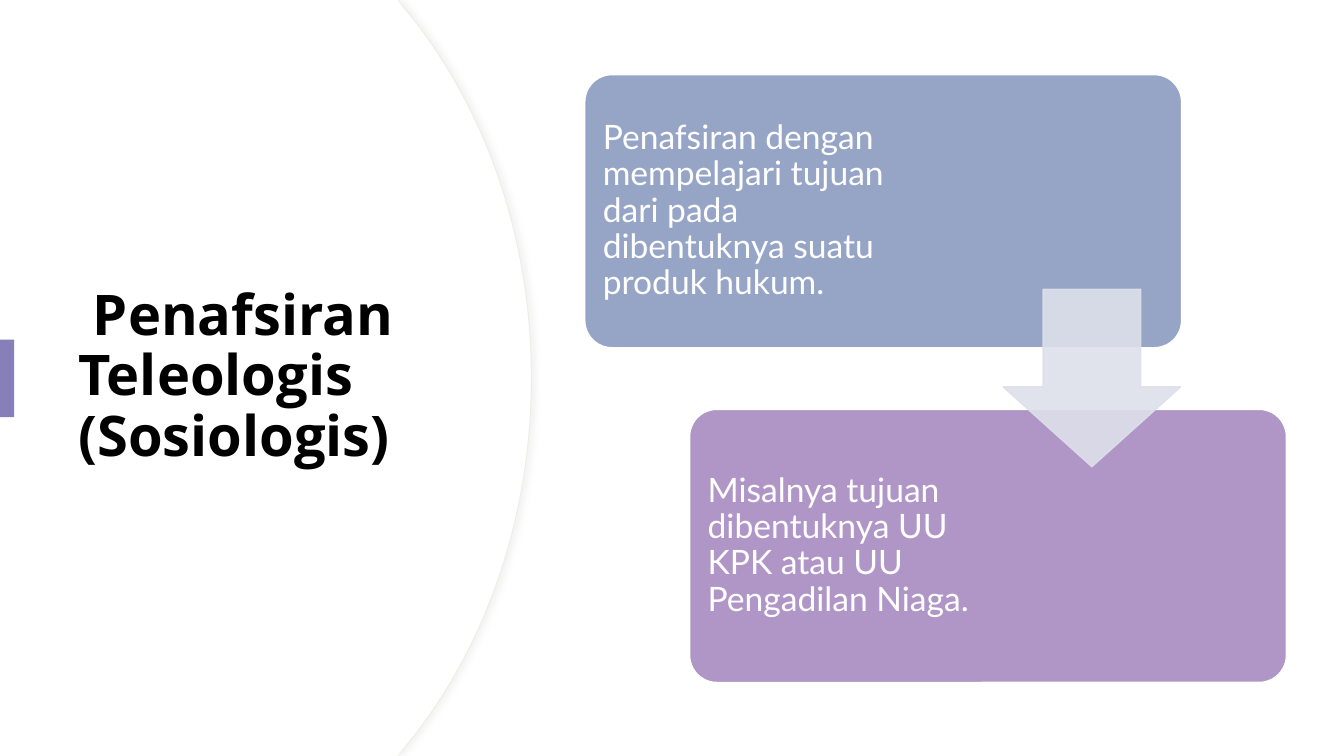
from dataclasses import dataclass
from lxml import etree
from pptx import Presentation
from pptx.dml.color import RGBColor
from pptx.enum.shapes import MSO_SHAPE as Preset
from pptx.enum.text import MSO_ANCHOR as Anchor
from pptx.oxml.ns import qn
from pptx.util import Inches, Pt

TITLE = (" ", "Penafsiran Teleologis (Sosiologis)")  # plain lead space, bold words
# wording, fill, text width in columns
CARDS = [
    ("Penafsiran dengan mempelajari tujuan dari pada dibentuknya suatu produk hukum.", "96A4C6", 23.33),
    ("Misalnya tujuan dibentuknya UU KPK atau UU Pengadilan Niaga.", "B096C6", 22.13),
]


@dataclass(frozen=True)
class Theme:
    white: str = "FFFFFF"
    black: str = "000000"
    edge: str = "F0EDE4"
    shade: str = "D9D9D9"
    accent: str = "867FBA"
    arrow: str = "DDE0EA"
    title_font: str = "Open Sans"
    body_font: str = "Lato"
    title_size: int = 40
    body_size: int = 24


THEME = Theme()
WIDTH, HEIGHT = Inches(13.33), Inches(7.5)

# The slide is a grid of 100 columns by 100 rows.
BACKDROP = (0, 0, 100, 100)
TITLE_AREA = (5.1, 16.93, 29.56, 66)
ACCENT_BAR = (0, 44.93, 1.05, 10.27)
CARD_LEFT, CARD_TOP, CARD_WIDTH, CARD_HEIGHT = 43.51, 9.87, 44.41, 36.13
CARD_STEP = (7.8, 44.27)
CARD_PAD = (0.6, 1.07)
ARROW = (74.64, 38.27, 13.2, 23.47)
ARC_START = (29.56, 0)
ARC_CURVE = [(30.01, 1.07), (35.86, 13.6), (39.46, 30.93), (39.46, 50)]
ARC_RIM = 0.08


def grid(*lengths):
    """Turn alternating columns and rows into slide lengths."""
    return [round(length * (HEIGHT if i % 2 else WIDTH) / 100) for i, length in enumerate(lengths)]


def paint(shape, fill, line=None, width=1):
    shape.shadow.inherit = False
    shape.fill.solid()
    shape.fill.fore_color.rgb = RGBColor.from_string(fill)
    if line:
        shape.line.color.rgb = RGBColor.from_string(line)
        shape.line.width = Pt(width)
    else:
        shape.line.fill.background()


def set_alpha(color, percent):
    etree.SubElement(color, qn("a:alpha"), val=str(percent * 1000))


def cast_shadow(shape):
    effects = shape.element.spPr.find(qn("a:effectLst"))
    shadow = etree.SubElement(effects, qn("a:outerShdw"), blurRad=str(Pt(4)), dist=str(Pt(3)),
                              dir="0", algn="l", rotWithShape="0")
    set_alpha(etree.SubElement(shadow, qn("a:srgbClr"), val=THEME.shade), 30)


def add_preset(page, kind, area, fill, line=None, adjust=()):
    shape = page.shapes.add_shape(kind, *grid(*area))
    for i, value in enumerate(adjust):
        shape.adjustments[i] = value
    paint(shape, fill, line)
    return shape


def add_text(page, area, parts, font, size, color):
    box = page.shapes.add_textbox(*grid(*area))
    frame = box.text_frame
    frame.word_wrap = True
    frame.vertical_anchor = Anchor.MIDDLE
    frame.margin_top = frame.margin_bottom = Inches(0.1)
    para = frame.paragraphs[0]
    para.line_spacing = 0.9
    for part in parts:
        span = para.add_run()
        span.text = part
        span.font.name = font
        span.font.size = Pt(size)
        span.font.color.rgb = RGBColor.from_string(color)
    return para


def bend(lines):
    """Merge three straight segments into one curve through their points."""
    curve = etree.Element(qn("a:cubicBezTo"))
    lines[0].addprevious(curve)
    for line in lines:
        curve.append(line[0])
        line.getparent().remove(line)


def add_arc_panel(page, rim):
    """Left panel with a bulging right edge, pushed outwards by rim columns."""
    upper = [ARC_START] + [(x + rim, y) for x, y in ARC_CURVE]
    lower = [(x, 100 - y) for x, y in reversed(upper[:-1])]
    builder = page.shapes.build_freeform(0, 0)
    builder.add_line_segments([grid(*point) for point in upper + lower + [(0, 100)]], close=True)
    panel = builder.convert_to_shape()
    lines = list(panel.element.spPr.iter(qn("a:lnTo")))
    for first in (2, 5):
        bend(lines[first:first + 3])
    return panel


def build():
    deck = Presentation()
    deck.slide_width, deck.slide_height = WIDTH, HEIGHT
    page = deck.slides.add_slide(deck.slide_layouts[6])

    add_preset(page, Preset.RECTANGLE, BACKDROP, THEME.white)
    rim_panel = add_arc_panel(page, ARC_RIM)
    paint(rim_panel, THEME.white, THEME.edge, 0.75)
    cast_shadow(rim_panel)
    paint(add_arc_panel(page, 0), THEME.white)

    title = add_text(page, TITLE_AREA, TITLE, THEME.title_font, THEME.title_size, THEME.black)
    title.runs[1].font.bold = True
    add_preset(page, Preset.RECTANGLE, ACCENT_BAR, THEME.accent)

    for i, (wording, fill, text_width) in enumerate(CARDS):
        left, top = CARD_LEFT + i * CARD_STEP[0], CARD_TOP + i * CARD_STEP[1]
        add_preset(page, Preset.ROUNDED_RECTANGLE, (left, top, CARD_WIDTH, CARD_HEIGHT),
                   fill, THEME.white, [0.1])
        text_area = (left + CARD_PAD[0], top + CARD_PAD[1], text_width, CARD_HEIGHT - 2 * CARD_PAD[1])
        add_text(page, text_area, [wording], THEME.body_font, THEME.body_size, THEME.white)

    arrow = add_preset(page, Preset.DOWN_ARROW, ARROW, THEME.arrow, THEME.arrow, [0.55, 0.45])
    for color in arrow.element.spPr.iter(qn("a:srgbClr")):
        set_alpha(color, 90)

    deck.save("out.pptx")


if __name__ == "__main__":
    build()
